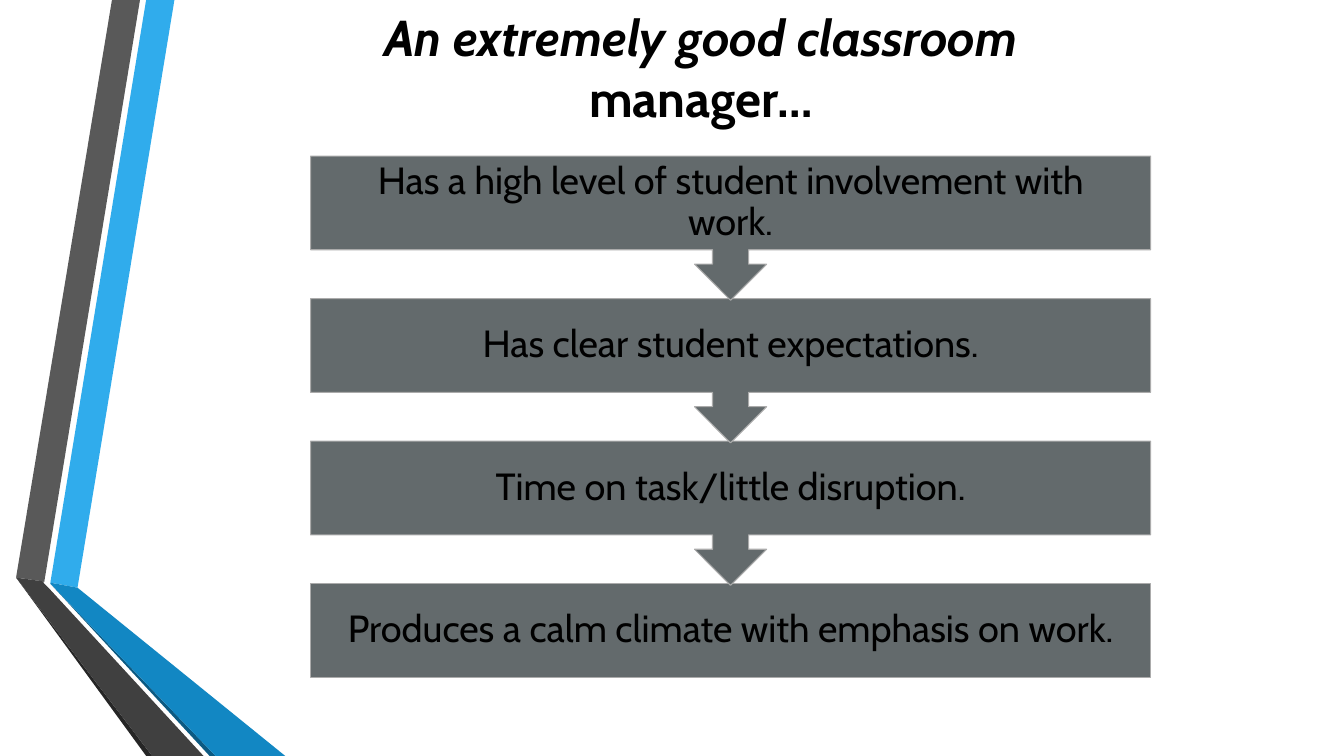
from dataclasses import dataclass

from pptx import Presentation
from pptx.dml.color import RGBColor
from pptx.enum.shapes import MSO_SHAPE
from pptx.enum.text import MSO_ANCHOR, PP_ALIGN
from pptx.shapes.autoshape import Shape
from pptx.slide import Slide
from pptx.text.text import TextFrame
from pptx.util import Pt


@dataclass(frozen=True)
class Theme:
    font: str = "Cabin"
    title_size: float = 36
    step_size: float = 27
    text: str = "000000"
    step_fill: str = "636A6C"
    step_line: str = "ABABAB"
    blue: str = "30ACEC"
    blue_fold: str = "1287C3"
    blue_edge: str = "0C5A82"
    grey: str = "595959"
    grey_fold: str = "404040"
    grey_edge: str = "262626"


@dataclass(frozen=True)
class Ribbon:
    color: str
    corners: tuple[tuple[float, float], ...]


@dataclass(frozen=True)
class Step:
    text: str
    top: float
    is_last: bool


THEME = Theme()
SLIDE_WIDTH, SLIDE_HEIGHT = 960, 540
STEP_LEFT, STEP_TOP, STEP_WIDTH = 221.8, 111.5, 600
BOX_HEIGHT, CALLOUT_HEIGHT, STEP_PITCH = 67, 103, 101.8
STEP_INSET = 15

RIBBONS = (
    Ribbon(THEME.blue, ((36, 416.2), (55.4, 419.8), (124.6, 0), (104.4, 0))),
    Ribbon(THEME.grey, ((100, 0), (80, 0), (11.5, 412.6), (31.7, 415.4))),
    Ribbon(THEME.grey_edge, ((11.5, 412.6), (104.4, 540), (108.7, 540))),
    Ribbon(THEME.blue_edge, ((36, 416.9), (149.8, 540), (154.1, 540))),
    Ribbon(THEME.blue_fold, ((36, 416.9), (154.1, 540), (203.8, 540),
                             (55.4, 419.8), (36, 416.2))),
    Ribbon(THEME.grey_fold, ((145.4, 540), (34.6, 419.8), (31, 416.2),
                             (31.7, 415.4), (11.5, 412.6), (108.7, 540))),
)

STEP_TEXTS = (
    "Has a high level of student involvement with work.",
    "Has clear student expectations.",
    "Time on task/little disruption.",
    "Produces a calm climate with emphasis on work.",
)
STEPS = [
    Step(text, STEP_TOP + index * STEP_PITCH, index == len(STEP_TEXTS) - 1)
    for index, text in enumerate(STEP_TEXTS)
]


def add_text(frame: TextFrame, text: str, *, size: float, bold: bool = False,
             italic: bool = False, line_spacing: float = 1.0) -> None:
    frame.word_wrap = True
    frame.vertical_anchor = MSO_ANCHOR.MIDDLE
    paragraph = frame.paragraphs[0]
    paragraph.alignment = PP_ALIGN.CENTER
    paragraph.line_spacing = line_spacing
    run = paragraph.add_run()
    run.text = text
    run.font.name = THEME.font
    run.font.size = Pt(size)
    run.font.bold = bold
    run.font.italic = italic
    run.font.color.rgb = RGBColor.from_string(THEME.text)


def fill_shape(shape: Shape, color: str) -> None:
    shape.shadow.inherit = False
    shape.fill.solid()
    shape.fill.fore_color.rgb = RGBColor.from_string(color)


def draw_ribbon(slide: Slide, ribbon: Ribbon) -> None:
    start, *rest = [(Pt(x), Pt(y)) for x, y in ribbon.corners]
    builder = slide.shapes.build_freeform(*start, scale=1.0)
    builder.add_line_segments(rest, close=True)
    outline = builder.convert_to_shape()
    fill_shape(outline, ribbon.color)
    outline.line.fill.background()


def draw_title(slide: Slide) -> None:
    title = slide.shapes.add_textbox(Pt(197.3), Pt(5.8), Pt(607), Pt(84.2))
    for text, italic in (("An extremely good classroom ", True), ("manager…", False)):
        add_text(title.text_frame, text, size=THEME.title_size, bold=True, italic=italic)


def draw_step(slide: Slide, step: Step) -> None:
    preset = MSO_SHAPE.RECTANGLE if step.is_last else MSO_SHAPE.DOWN_ARROW_CALLOUT
    height = BOX_HEIGHT if step.is_last else CALLOUT_HEIGHT
    box = slide.shapes.add_shape(
        preset, Pt(STEP_LEFT), Pt(step.top), Pt(STEP_WIDTH), Pt(height))
    fill_shape(box, THEME.step_fill)
    box.line.color.rgb = RGBColor.from_string(THEME.step_line)
    box.line.width = Pt(0.75)
    frame = box.text_frame
    frame.margin_left = frame.margin_right = Pt(STEP_INSET)
    frame.margin_top = frame.margin_bottom = Pt(STEP_INSET)
    add_text(frame, step.text, size=THEME.step_size, line_spacing=0.9)


def main() -> None:
    presentation = Presentation()
    presentation.slide_width = Pt(SLIDE_WIDTH)
    presentation.slide_height = Pt(SLIDE_HEIGHT)
    slide = presentation.slides.add_slide(presentation.slide_layouts[6])
    for ribbon in RIBBONS:
        draw_ribbon(slide, ribbon)
    draw_title(slide)
    for step in reversed(STEPS):
        draw_step(slide, step)
    presentation.save("out.pptx")


if __name__ == "__main__":
    main()
